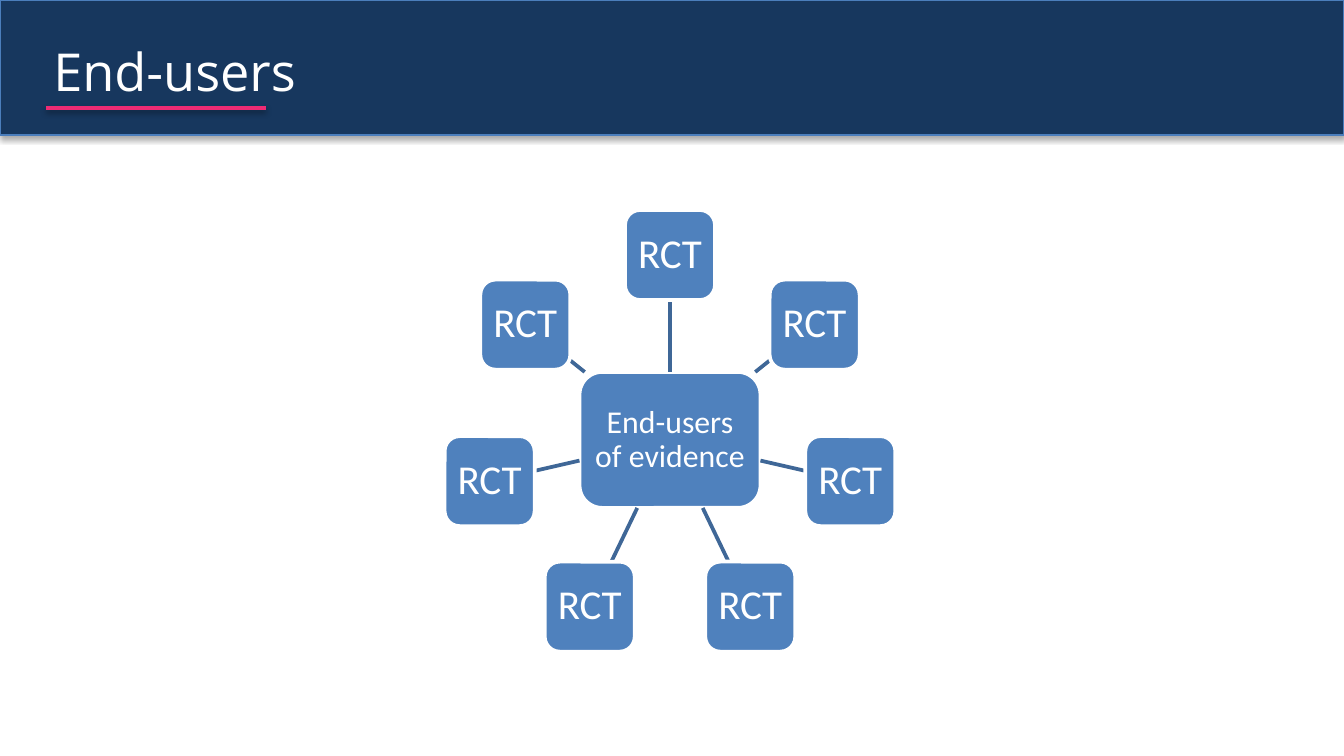
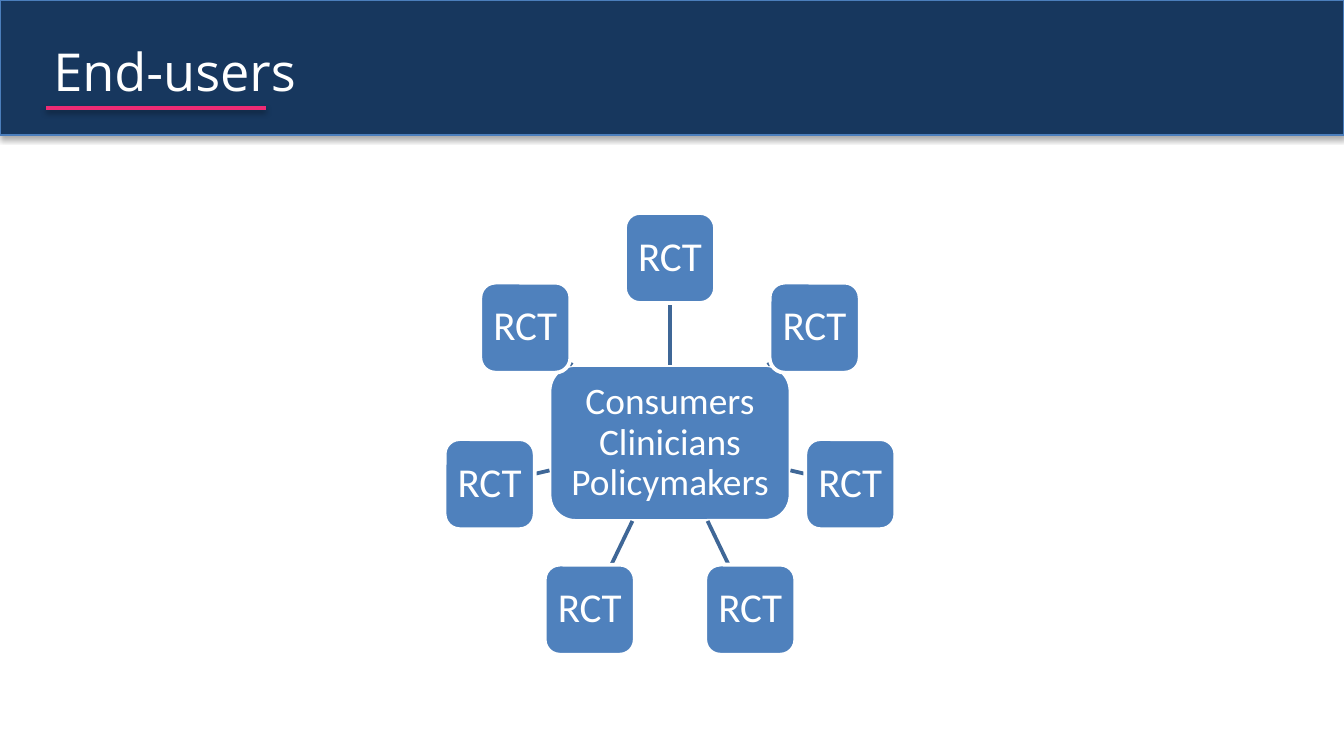
from math import cos, pi, sin

from pptx import Presentation
from pptx.dml.color import RGBColor
from pptx.enum.shapes import MSO_CONNECTOR, MSO_SHAPE
from pptx.enum.text import MSO_ANCHOR, MSO_AUTO_SIZE, PP_ALIGN
from pptx.oxml import parse_xml
from pptx.oxml.ns import nsdecls
from pptx.util import Emu, Pt

COLORS = {
    "band": "17375E",
    "band_line": "4B7EBC",
    "accent": "EE2B74",
    "box": "4F81BD",
    "spoke": "3F6797",
    "white": "FFFFFF",
}
C = {name: RGBColor.from_string(value) for name, value in COLORS.items()}
CENTER_X, RADIUS, NODE, SPOKES = 670, 185, 90, 7
DIAGRAMS = [
    ("End-users of evidence", 17, 181, 136, 440, 7),
    ("Consumers Clinicians Policymakers", 20, 241, 156, 443, 8),
]


def px(n):
    return Emu(round(n * 914400 / 134.4))


def add_box(shapes, text, size, cx, cy, w, h, inset):
    sp = shapes.add_shape(MSO_SHAPE.ROUNDED_RECTANGLE,
                          px(cx - w / 2), px(cy - h / 2), px(w), px(h))
    sp.shadow.inherit = False
    sp.fill.solid()
    sp.fill.fore_color.rgb = C["box"]
    sp.line.color.rgb = C["white"]
    sp.line.width = Pt(2)
    tf = sp.text_frame
    tf.word_wrap = True
    tf.vertical_anchor = MSO_ANCHOR.MIDDLE
    tf.margin_left = tf.margin_right = tf.margin_top = tf.margin_bottom = px(inset)
    p = tf.paragraphs[0]
    p.text = text
    p.alignment = PP_ALIGN.CENTER
    p.line_spacing = 0.9
    p.font.name = "Calibri"
    p.font.size = Pt(size)
    p.font.color.rgb = C["white"]


prs = Presentation()
prs.slide_width, prs.slide_height = px(1344), px(756)
layout = prs.slide_layouts[5]
slides = [prs.slides.add_slide(layout) for _ in DIAGRAMS]

band = slides[0].shapes.add_shape(MSO_SHAPE.RECTANGLE, 0, 0, px(1344), px(135))
band.fill.solid()
band.fill.fore_color.rgb = C["band"]
band.line.color.rgb = C["band_line"]
band.line.width = Pt(0.75)
rule = slides[0].shapes.add_connector(
    MSO_CONNECTOR.STRAIGHT, px(46), px(108), px(266), px(108))
rule.line.color.rgb = C["accent"]
rule.line.width = Pt(2)

for i, (sp, alpha, dist) in enumerate([(band, 35, 23000), (rule, 38, 20000)]):
    sp.element.spPr.append(parse_xml(
        f'<a:effectLst {nsdecls("a")}><a:outerShdw blurRad="40000" dist="{dist}" '
        f'dir="5400000" rotWithShape="0"><a:srgbClr val="000000">'
        f'<a:alpha val="{alpha * 1000}"/></a:srgbClr></a:outerShdw></a:effectLst>'))
    sp.element.xpath(".//p:cNvPr")[0].set("id", str(20 + i))
    layout.shapes.element.insert(2 + i, sp.element)

for s, (text, size, hub_w, hub_h, cy, inset) in zip(slides, DIAGRAMS):
    title = s.shapes.title
    title.left, title.top, title.width, title.height = px(40), px(32), px(1259), px(77)
    tf = title.text_frame
    tf.word_wrap = True
    tf.auto_size = MSO_AUTO_SIZE.SHAPE_TO_FIT_TEXT
    tf.vertical_anchor = MSO_ANCHOR.TOP
    p = tf.paragraphs[0]
    p.text = "End-users"
    p.alignment = PP_ALIGN.LEFT
    p.font.name = "Open Sans"
    p.font.size = Pt(28)
    p.font.color.rgb = C["white"]

    diagram = s.shapes.add_group_shape().shapes
    add_box(diagram, text, size, CENTER_X, cy, hub_w, hub_h, inset)
    for i in range(SPOKES):
        angle = 2 * pi * i / SPOKES
        dx, dy = sin(angle), -cos(angle)
        reach = max(abs(dx), abs(dy))
        start = 1 / max(2 * abs(dx) / hub_w, 2 * abs(dy) / hub_h)
        end = RADIUS - NODE / 2 / reach
        spoke = diagram.add_connector(
            MSO_CONNECTOR.STRAIGHT,
            px(CENTER_X + start * dx), px(cy + start * dy),
            px(CENTER_X + end * dx), px(cy + end * dy))
        spoke.line.color.rgb = C["spoke"]
        spoke.line.width = Pt(2)
        spoke.element.spPr.append(parse_xml(f'<a:effectLst {nsdecls("a")}/>'))
        add_box(diagram, "RCT", 22, CENTER_X + RADIUS * dx, cy + RADIUS * dy,
                NODE, NODE, 7)

prs.save("out.pptx")
